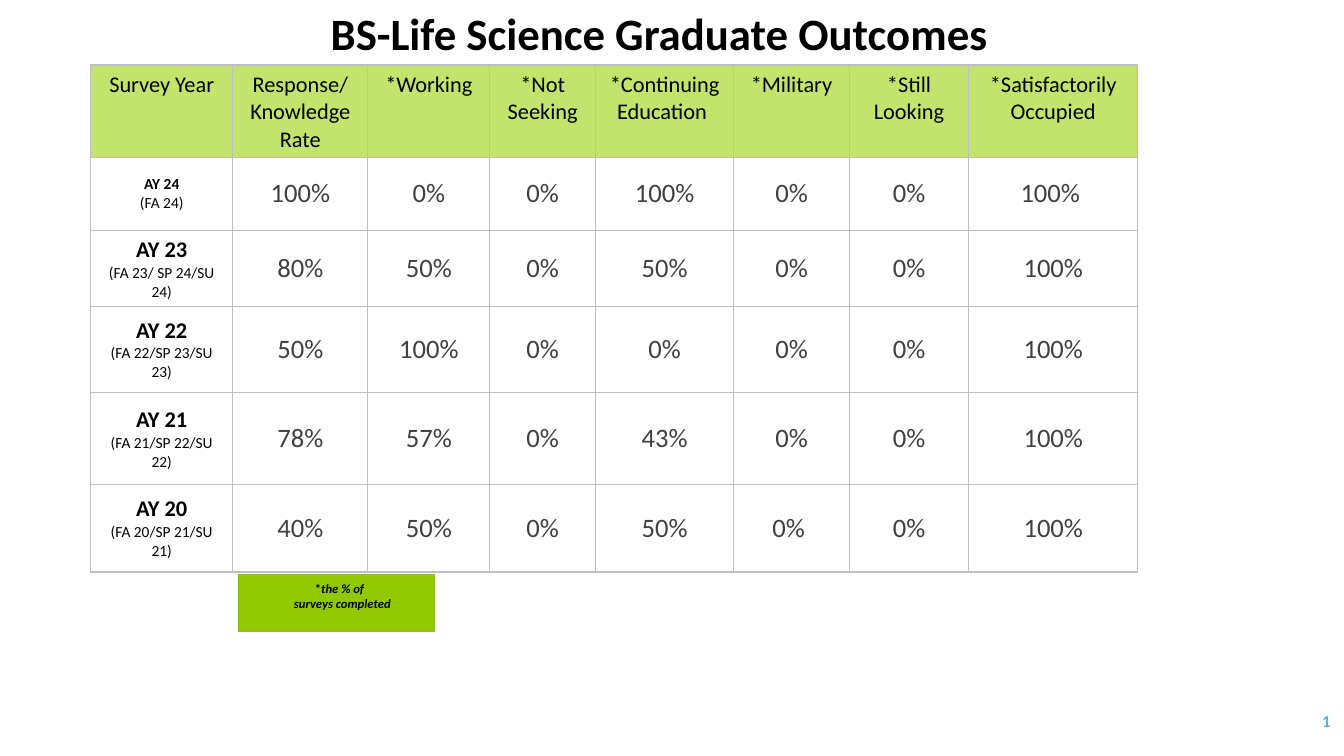
from lxml.etree import SubElement
from pptx import Presentation
from pptx.dml.color import RGBColor
from pptx.enum.shapes import MSO_SHAPE as Shape
from pptx.enum.text import MSO_ANCHOR as Anchor, MSO_AUTO_SIZE as AutoSize, PP_ALIGN as Align
from pptx.oxml.ns import qn
from pptx.util import Pt

BLACK = RGBColor(0x00, 0x00, 0x00)
WHITE = RGBColor(0xFF, 0xFF, 0xFF)
GRAY = RGBColor(0x40, 0x40, 0x40)
BORDER = RGBColor(0xBF, 0xBF, 0xBF)
HEADER_GREEN = RGBColor(0xC2, 0xE4, 0x6D)
NOTE_GREEN = RGBColor(0x90, 0xC9, 0x00)
NOTE_EDGE = RGBColor(0x90, 0xBB, 0x23)
TEAL = RGBColor(0x40, 0xBA, 0xD2)

COLUMN_WIDTHS = [101.5, 96.5, 87.1, 75.6, 98.6, 82.8, 85, 121]
ROW_HEIGHTS = [65.5, 51.8, 51.8, 61.9, 65.5, 62.6]
HEADERS = [
    ["Survey Year"], ["Response/", "Knowledge", "Rate"], ["*Working"], ["*Not", "Seeking"],
    ["*Continuing Education "], ["*Military"], ["*Still Looking"], ["*Satisfactorily", "Occupied"],
]
OUTCOMES = [
    ("AY 24", 11, "(FA 24)", ["100%", "0%", "0%", "100%", "0%", "0%", "100% "]),
    ("AY 23", 16, "(FA 23/ SP 24/SU 24)", ["80%", "50%", "0%", "50%", "0%", "0%", "100%"]),
    ("AY 22", 16, "(FA 22/SP 23/SU 23)", ["50%", "100%", "0%", "0%", "0%", "0%", "100%"]),
    ("AY 21", 16, "(FA 21/SP 22/SU 22)", ["78%", "57%", "0%", "43%", "0%", "0%", "100%"]),
    ("AY 20", 16, "(FA 20/SP 21/SU 21)", ["40%", "50%", "0%", "50%", "0% ", "0%", "100%"]),
]


def add_text(para, text, size=16, color=BLACK, bold=False, italic=False, align=Align.CENTER):
    """Append a formatted span to a paragraph."""
    para.alignment = align
    span = para.add_run()
    span.text = text
    font = span.font
    font.name, font.size, font.bold, font.italic = "Calibri", Pt(size), bold, italic
    font.color.rgb = color


def write_lines(frame, lines):
    """Write one paragraph for each pair of text and format."""
    for index, (text, style) in enumerate(lines):
        para = frame.add_paragraph() if index else frame.paragraphs[0]
        add_text(para, text, **style)


def add_title(page, left, top, width, height):
    """Place and format the slide title."""
    title = page.shapes.title
    title.left, title.top, title.width, title.height = map(Pt, (left, top, width, height))
    frame = title.text_frame
    frame.word_wrap = True
    frame.auto_size = AutoSize.SHAPE_TO_FIT_TEXT
    frame.vertical_anchor = Anchor.TOP
    add_text(frame.paragraphs[0], "BS-Life Science Graduate Outcomes",
             size=32, bold=True, align=Align.LEFT)


def format_cell(cell, lines, fill, anchor):
    """Fill a table cell with text, borders, margins and a background."""
    cell.margin_left = cell.margin_right = Pt(8.64)
    cell.margin_top = cell.margin_bottom = Pt(4.32)
    cell.vertical_anchor = anchor
    properties = cell._tc.get_or_add_tcPr()
    for side in ("lnL", "lnR", "lnT", "lnB"):
        line = SubElement(properties, qn(f"a:{side}"), w=str(Pt(1)))
        solid = SubElement(line, qn("a:solidFill"))
        SubElement(solid, qn("a:srgbClr"), val=str(BORDER))
    cell.fill.solid()
    cell.fill.fore_color.rgb = fill
    write_lines(cell.text_frame, lines)


def add_outcomes_table(page, left, top):
    """Build the table of graduate outcomes by survey year."""
    table = page.shapes.add_table(
        len(ROW_HEIGHTS), len(COLUMN_WIDTHS), Pt(left), Pt(top),
        Pt(sum(COLUMN_WIDTHS)), Pt(sum(ROW_HEIGHTS))).table
    for column, width in zip(table.columns, COLUMN_WIDTHS):
        column.width = Pt(width)
    for row, height in zip(table.rows, ROW_HEIGHTS):
        row.height = Pt(height)
    for column, header in enumerate(HEADERS):
        format_cell(table.cell(0, column), [(text, {}) for text in header],
                    HEADER_GREEN, Anchor.TOP)
    for row, (year, year_size, terms, rates) in enumerate(OUTCOMES, 1):
        year_lines = [(year, dict(size=year_size, bold=True)), (terms, dict(size=11))]
        rate_lines = [[(rate, dict(size=19, color=GRAY))] for rate in rates]
        for column, lines in enumerate([year_lines, *rate_lines]):
            format_cell(table.cell(row, column), lines, WHITE, Anchor.MIDDLE)


def add_text_box(page, left, top, width, height):
    """Add a wrapping text box and return its text frame."""
    box = page.shapes.add_textbox(Pt(left), Pt(top), Pt(width), Pt(height))
    box.text_frame.word_wrap = True
    return box.text_frame


def add_note(page, left, top, width, height):
    """Draw the green footnote panel and its text."""
    panel = page.shapes.add_shape(Shape.RECTANGLE, Pt(left), Pt(top), Pt(width), Pt(height))
    panel.shadow.inherit = False
    panel.fill.solid()
    panel.fill.fore_color.rgb = NOTE_GREEN
    panel.line.color.rgb = NOTE_EDGE
    panel.line.width = Pt(0.75)
    frame = add_text_box(page, left + 13, top + 0.7, width - 20, 28.8)
    frame.auto_size = AutoSize.SHAPE_TO_FIT_TEXT
    style = dict(size=9, bold=True)
    write_lines(frame, [("*", style), (" surveys completed", dict(style, italic=True))])
    add_text(frame.paragraphs[0], "the % of ", italic=True, **style)


def add_page_number(page, left, top, width, height):
    """Add the page number in the lower right corner."""
    frame = add_text_box(page, left, top, width, height)
    frame.vertical_anchor = Anchor.MIDDLE
    add_text(frame.paragraphs[0], "1", size=12, color=TEAL, bold=True, align=Align.RIGHT)
    frame.paragraphs[0].space_after = Pt(6)


def main():
    """Build the outcomes slide and save the deck."""
    deck = Presentation()
    deck.slide_width, deck.slide_height = Pt(960), Pt(540)
    page = deck.slides.add_slide(deck.slide_layouts[5])
    add_title(page, 229, 0.7, 580.3, 46)
    add_page_number(page, 837.4, 500.4, 120.2, 28.8)
    add_outcomes_table(page, 64.8, 46.4)
    add_note(page, 170.6, 410.4, 139.7, 41)
    deck.save("out.pptx")


if __name__ == "__main__":
    main()
